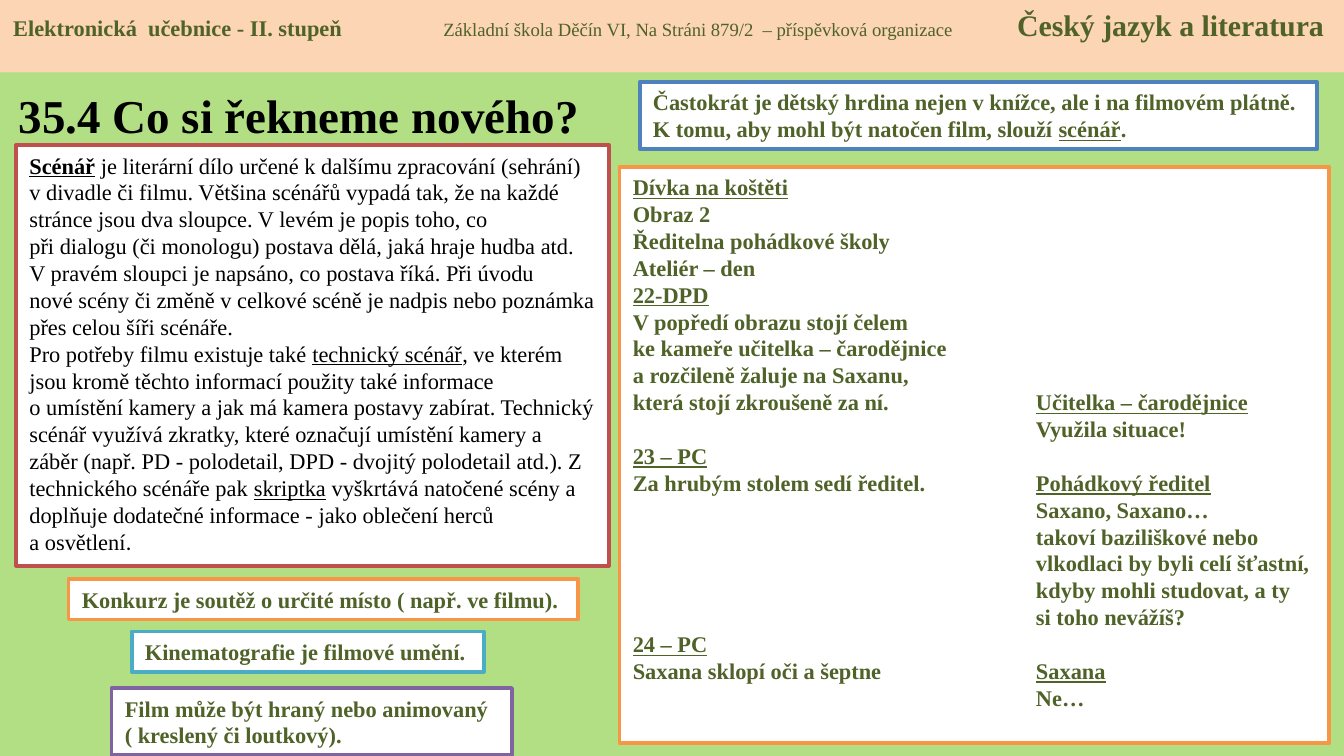
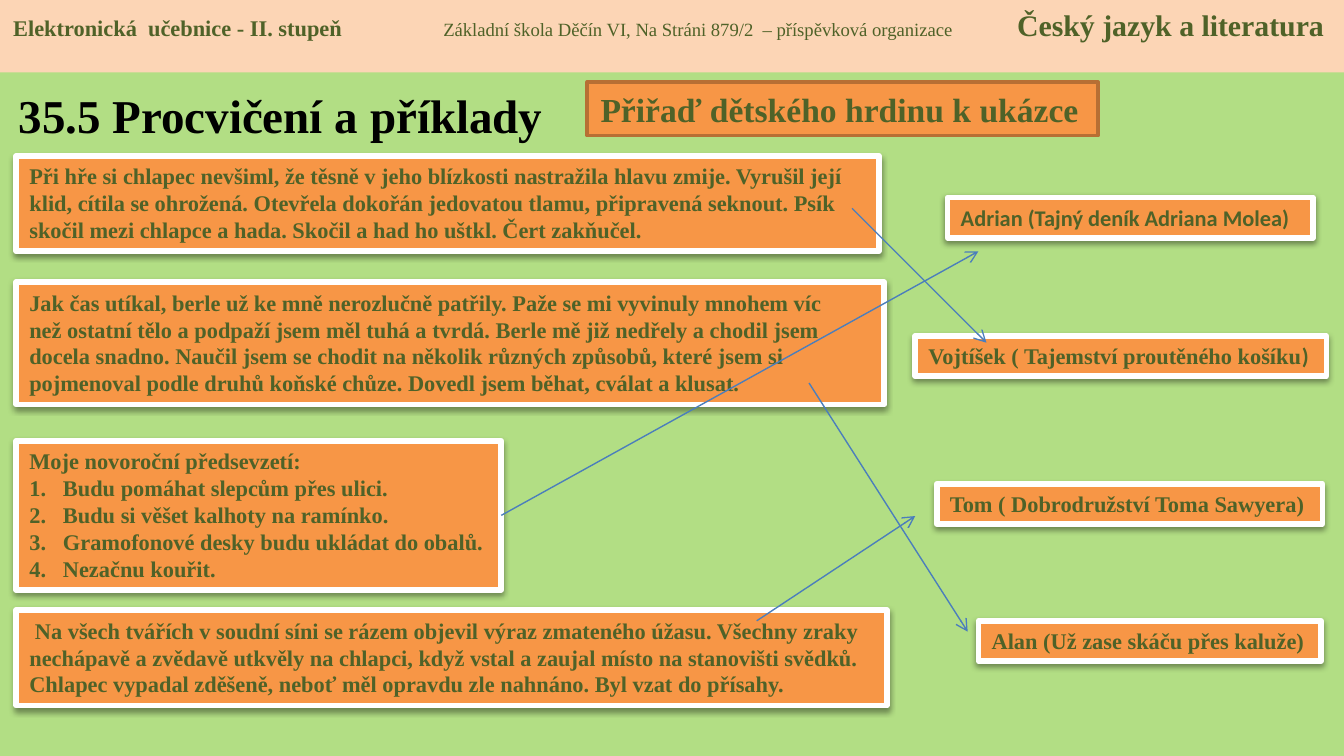
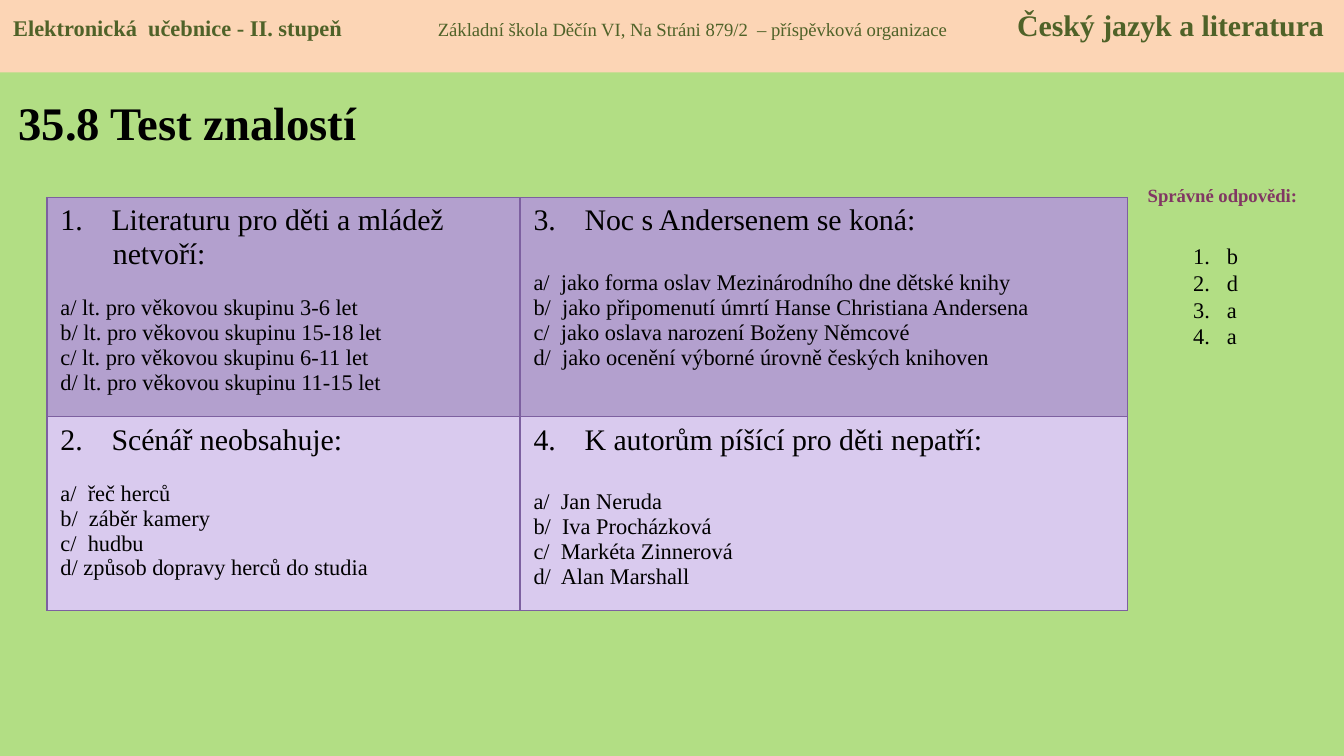
from dataclasses import dataclass, replace

from lxml.etree import SubElement
from pptx import Presentation
from pptx.dml.color import RGBColor
from pptx.enum.shapes import MSO_CONNECTOR as CONNECTOR, MSO_SHAPE as SHAPE
from pptx.enum.text import MSO_ANCHOR as ANCHOR, PP_ALIGN as ALIGN
from pptx.oxml.ns import qn
from pptx.util import Inches, Pt

BACKGROUND = RGBColor(0xB2, 0xDE, 0x84)
PEACH = RGBColor(0xFC, 0xD5, 0xB5)
OLIVE = RGBColor(0x4F, 0x62, 0x28)
BLACK = RGBColor(0, 0, 0)
WHITE = RGBColor(0xFF, 0xFF, 0xFF)
RED = RGBColor(0xC0, 0x50, 0x4D)
BLUE = RGBColor(0x4F, 0x81, 0xBD)
ARROW_BLUE = RGBColor(0x4B, 0x7E, 0xBC)
TEAL = RGBColor(0x4B, 0xAC, 0xC6)
PURPLE = RGBColor(0x80, 0x64, 0xA2)
ORANGE = RGBColor(0xF7, 0x96, 0x46)
BROWN = RGBColor(0xB7, 0x6F, 0x34)
PLUM = RGBColor(0x81, 0x37, 0x63)
ROW_FILLS = (RGBColor(0xB3, 0xA0, 0xCE), RGBColor(0xD9, 0xCA, 0xEE))
BORDER = "7D60A0"
HARD_SPACE = chr(160)


@dataclass(frozen=True)
class Style:
    """Look of a run of text."""
    size: float = 12
    color: RGBColor = OLIVE
    bold: bool = True
    font: str = "Times New Roman"


BODY = Style()
BODY_CALIBRI = replace(BODY, font="Calibri")
PLAIN = Style(color=BLACK, bold=False)
QUESTION = replace(PLAIN, size=16)


def add_run(p, text, style, underline=False):
    """Append one formatted run to a paragraph."""
    r = p.add_run()
    r.text = text
    font = r.font
    font.name, font.size, font.bold = style.font, Pt(style.size), style.bold
    font.color.rgb = style.color
    if underline:
        font.underline = True


def write(tf, lines, style, spacing=True):
    """Write paragraphs, with _underlined_ parts and ~ for a hard space."""
    for i, line in enumerate(lines):
        p = tf.paragraphs[0] if i == 0 else tf.add_paragraph()
        if spacing:
            p.line_spacing = Pt(1.2 * style.size)
        for n, part in enumerate(line.replace("~", HARD_SPACE).split("_")):
            if part:
                add_run(p, part, style, underline=n % 2 == 1)


def set_indent(p, left, first=0):
    """Set the left margin and first-line indent of a paragraph."""
    pPr = p._p.get_or_add_pPr()
    pPr.set("marL", str(Inches(left)))
    pPr.set("indent", str(Inches(first)))
    return pPr


def number(p, indent, start=1):
    """Give a paragraph an automatic number with a hanging indent."""
    bullet = SubElement(set_indent(p, indent, -indent), qn("a:buAutoNum"),
                        type="arabicPeriod")
    if start > 1:
        bullet.set("startAt", str(start))


def set_tabs(p, *positions):
    """Set left tab stops, in inches from the text edge."""
    tabs = SubElement(p._p.get_or_add_pPr(), qn("a:tabLst"))
    for position in positions:
        SubElement(tabs, qn("a:tab"), pos=str(Inches(position)), algn="l")


def add_text(slide, at, lines, style, anchor=ANCHOR.TOP):
    """Add a plain text box."""
    tb = slide.shapes.add_textbox(*map(Inches, at))
    tf = tb.text_frame
    tf.word_wrap = True
    tf.vertical_anchor = anchor
    write(tf, lines, style)
    return tb


def add_box(slide, at, lines, fill=WHITE, line=None, width=2, style=BODY, wrap=False):
    """Add a filled rectangle with left-aligned text."""
    sp = slide.shapes.add_shape(SHAPE.RECTANGLE, *map(Inches, at))
    sp.shadow.inherit = False
    sp.fill.solid()
    sp.fill.fore_color.rgb = fill
    if line is None:
        sp.line.fill.background()
    else:
        sp.line.color.rgb = line
        sp.line.width = Pt(width)
    tf = sp.text_frame
    tf.word_wrap = wrap
    tf.vertical_anchor = ANCHOR.TOP
    write(tf, lines, style)
    for p in tf.paragraphs:
        p.alignment = ALIGN.LEFT
    return sp


def add_card(slide, at, lines, style=BODY, wrap=False):
    """Add an orange box with a white frame and a soft shadow."""
    sp = add_box(slide, at, lines, ORANGE, WHITE, 3, style, wrap)
    effects = sp._element.spPr.find(qn("a:effectLst"))
    shadow = SubElement(effects, qn("a:outerShdw"), blurRad=str(Pt(3.1)),
                        dist=str(Pt(1.6)), dir="5400000", rotWithShape="0")
    color = SubElement(shadow, qn("a:srgbClr"), val="000000")
    SubElement(color, qn("a:alpha"), val="38000")
    return sp


def add_arrow(slide, start, end):
    """Add a thin line with an open arrowhead at its end."""
    cxn = slide.shapes.add_connector(CONNECTOR.STRAIGHT, *map(Inches, start + end))
    cxn.line.color.rgb = ARROW_BLUE
    cxn.line.width = Pt(0.75)
    SubElement(cxn.line._get_or_add_ln(), qn("a:tailEnd"), type="arrow")
    SubElement(cxn._element.spPr, qn("a:effectLst"))
    return cxn


def add_page(prs, title, top=0.53, width=4.69, size=25.2, school_tab=3.2):
    """Add a slide with the green ground, the header band and a title."""
    slide = prs.slides.add_slide(prs.slide_layouts[6])
    slide.background.fill.solid()
    slide.background.fill.fore_color.rgb = BACKGROUND
    add_text(slide, (0.04, top, width, 0.65), [title],
             Style(size=size, color=BLACK), ANCHOR.MIDDLE)
    band = add_box(slide, (0, 0, 10, 0.54), ["Elektronická  učebnice - II. stupeň\t"],
                   PEACH, wrap=True)
    p = band.text_frame.paragraphs[0]
    p.line_spacing = Pt(19.2)
    set_tabs(p, school_tab, 7.47)
    add_run(p, "Základní škola Děčín VI, Na Stráni 879/2  – příspěvková organizace\t",
            replace(BODY, size=10, bold=False))
    add_run(p, "Český jazyk a literatura", replace(BODY, size=16))
    return slide


def fill_cell(cell, fill, start, question, gap, answers):
    """Write a numbered question with its answers into a bordered cell."""
    cell.fill.solid()
    cell.fill.fore_color.rgb = fill
    tf = cell.text_frame
    write(tf, question, QUESTION, spacing=False)
    number(tf.paragraphs[0], 0.38, start)
    for p in tf.paragraphs[1:]:
        set_indent(p, 0.39)
    for i, answer in enumerate(answers):
        p = tf.add_paragraph()
        if i == 0:
            p.space_before = Pt(gap)
        add_run(p, answer, PLAIN)
    tcPr = cell._tc.get_or_add_tcPr()
    for i, side in enumerate(("a:lnL", "a:lnR", "a:lnT", "a:lnB")):
        ln = tcPr.makeelement(qn(side), {"w": str(Pt(0.75))})
        SubElement(SubElement(ln, qn("a:solidFill")), qn("a:srgbClr"), val=BORDER)
        tcPr.insert(i, ln)


def add_quiz(slide, at, widths, heights, questions):
    """Add the table of questions, numbered down the columns."""
    rows, cols = len(heights), len(widths)
    table = slide.shapes.add_table(rows, cols, *map(Inches, at)).table
    for column, width in zip(table.columns, widths):
        column.width = Inches(width)
    for row, height in zip(table.rows, heights):
        row.height = Inches(height)
    for i, (question, gap, answers) in enumerate(questions):
        col, row = divmod(i, rows)
        fill_cell(table.cell(row, col), ROW_FILLS[row], i + 1, question, gap, answers)


def build_screenplay(prs):
    """Build the slide about screenplays."""
    slide = add_page(prs, "35.4 Co si řekneme nového?")
    definition = add_box(slide, (0.12, 1.08, 4.41, 3.13), [
        "_Scénář_~je literární dílo určené k dalšímu zpracování (sehrání) v~divadle~či~filmu. "
        "Většina scénářů vypadá tak, že na každé stránce jsou dva sloupce. V levém je popis "
        "toho, co při~dialogu~(či monologu) postava dělá, jaká hraje~hudba~atd. V pravém "
        "sloupci je napsáno, co postava říká. Při úvodu nové~scény~či změně v celkové scéně "
        "je nadpis nebo poznámka přes celou šíři scénáře.",
        "Pro potřeby filmu existuje také _technický~scénář_, ve kterém jsou kromě těchto "
        "informací použity také informace",
        "o umístění kamery a jak má~kamera~postavy~zabírat. Technický scénář využívá zkratky, "
        "které označují umístění kamery a záběr (např. PD - polodetail, DPD - dvojitý "
        "polodetail atd.). Z technického scénáře pak~_skriptka_~vyškrtává natočené scény a "
        "doplňuje dodatečné informace - jako oblečení~herců a~osvětlení",
    ], line=RED, style=PLAIN, wrap=True)
    paragraphs = definition.text_frame.paragraphs
    paragraphs[0].runs[0].font.bold = True
    add_run(paragraphs[-1], ".", replace(PLAIN, font="Calibri"))
    notes = [
        ((4.76, 0.61, 5.04, 0.5), BLUE,
         ["Častokrát je dětský hrdina nejen v knížce, ale i na filmovém plátně.",
          "K tomu, aby mohl být natočen film, slouží _scénář_."]),
        ((0.98, 4.7, 2.62, 0.3), TEAL, ["Kinematografie je filmové umění."]),
        ((0.83, 5.12, 2.98, 0.5), PURPLE,
         ["Film může být hraný nebo animovaný", "( kreslený či loutkový)."]),
        ((0.51, 4.31, 3.79, 0.3), ORANGE,
         ["Konkurz je soutěž o určité místo ( např. ve filmu)."]),
    ]
    for at, color, lines in notes:
        add_box(slide, at, lines, line=color)
    script = add_box(slide, (4.61, 1.24, 5.28, 4.29), [
        "_Dívka na koštěti_",
        "Obraz 2",
        "Ředitelna pohádkové školy",
        "Ateliér – den",
        "_22-DPD_",
        "V popředí obrazu stojí čelem",
        "ke kameře učitelka – čarodějnice",
        "a rozčileně žaluje na Saxanu,",
        "která stojí zkroušeně za ní.\t_Učitelka – čarodějnice_",
        "\tVyužila situace!",
        "_23 – PC_",
        "Za hrubým stolem sedí ředitel.\t_Pohádkový ředitel_",
        "\tSaxano, Saxano…",
        "\ttakoví baziliškové nebo",
        "\tvlkodlaci by byli celí šťastní,",
        "\tkdyby mohli studovat, a ty",
        "\tsi toho nevážíš?",
        "_24 – PC_",
        "Saxana sklopí oči a šeptne\t_Saxana_",
        "\tNe…",
    ], line=ORANGE, wrap=True)
    for p in script.text_frame.paragraphs:
        set_tabs(p, 3)


def build_matching(prs):
    """Build the slide matching heroes to extracts."""
    slide = add_page(prs, "35.5 Procvičení a příklady", width=4.37)
    add_box(slide, (4.37, 0.61, 3.8, 0.4), ["Přiřaď dětského hrdinu k ukázce"],
            ORANGE, BROWN, style=replace(BODY, size=18))
    add_card(slide, (0.12, 1.16, 6.42, 0.71), [
        "Při hře si chlapec nevšiml, že těsně v jeho blízkosti nastražila hlavu zmije. Vyrušil "
        "její klid, cítila se ohrožená. Otevřela dokořán jedovatou tlamu, připravená seknout. "
        "Psík skočil mezi chlapce a hada. Skočil a had ho uštkl. Čert zakňučel."], wrap=True)
    basket = add_card(slide, (6.81, 2.5, 3.06, 0.3),
                      ["Vojtíšek ( Tajemství proutěného košíku"])
    add_run(basket.text_frame.paragraphs[0], ")", BODY_CALIBRI)
    add_card(slide, (0.12, 2.1, 6.46, 0.91), [
        "Jak čas utíkal, berle už ke mně nerozlučně patřily. Paže se mi vyvinuly mnohem víc",
        "než ostatní tělo a podpaží jsem měl tuhá a tvrdá. Berle mě již nedřely a chodil jsem "
        "docela snadno. Naučil jsem se chodit na několik různých způsobů, které jsem si "
        "pojmenoval podle druhů koňské chůze. Dovedl jsem běhat, cválat a klusat."], wrap=True)
    add_card(slide, (7.28, 4.62, 2.55, 0.3), ["Alan (Už zase skáču přes kaluže)"])
    resolutions = add_card(slide, (0.12, 3.28, 3.61, 1.11), [
        "Moje novoroční předsevzetí:",
        "Budu pomáhat slepcům přes ulici.",
        "Budu si věšet kalhoty na ramínko.",
        "Gramofonové desky budu ukládat do obalů.",
        "Nezačnu kouřit."])
    for p in resolutions.text_frame.paragraphs[1:]:
        number(p, 0.25)
    add_card(slide, (6.97, 3.6, 2.87, 0.3), ["Tom ( Dobrodružství Toma Sawyera)"])
    add_card(slide, (0.12, 4.54, 6.48, 0.71), [
        " Na všech tvářích v soudní síni se rázem objevil výraz zmateného úžasu. Všechny zraky",
        "nechápavě a zvědavě utkvěly na chlapci, když vstal a zaujal místo na stanovišti svědků.",
        "Chlapec vypadal zděšeně, neboť měl opravdu zle nahnáno. Byl vzat do přísahy."])
    add_card(slide, (7.05, 1.47, 2.72, 0.3), ["Adrian (Tajný deník Adriana Molea)"],
             BODY_CALIBRI)
    add_arrow(slide, (6.34, 1.55), (7.34, 2.55))
    add_arrow(slide, (6.02, 2.85), (7.2, 4.7))
    add_arrow(slide, (3.73, 3.84), (7.28, 1.87)).begin_connect(resolutions, 3)
    add_arrow(slide, (5.63, 4.62), (6.81, 3.84))


def build_test(prs):
    """Build the slide with the knowledge test."""
    slide = add_page(prs, "35.8 Test znalostí", 0.58, 3.19, 25, school_tab=3.16)
    heading = add_text(slide, (8.31, 1.32, 1.57, 0.27), ["Správné odpovědi:"],
                       Style(size=10, color=PLUM))
    heading.text_frame.paragraphs[0].alignment = ALIGN.CENTER
    add_quiz(slide, (0.35, 1.47, 8.04, 3.07), (3.52, 4.52), (1.63, 1.44), [
        (["Literaturu pro děti a mládež", "netvoří:"], 13.3,
         ["a/ lt. pro věkovou skupinu 3-6 let", "b/ lt. pro věkovou skupinu 15-18 let",
          "c/ lt. pro věkovou skupinu 6-11 let", "d/ lt. pro věkovou skupinu 11-15 let"]),
        (["Scénář neobsahuje:"], 13.3,
         ["a/  řeč herců", "b/  záběr kamery", "c/  hudbu",
          "d/ způsob dopravy herců do studia"]),
        (["Noc s Andersenem se koná:"], 17.7,
         ["a/  jako forma oslav Mezinárodního dne dětské knihy",
          "b/  jako připomenutí úmrtí Hanse Christiana Andersena",
          "c/  jako oslava narození Boženy Němcové",
          "d/  jako ocenění výborné úrovně českých knihoven"]),
        (["K autorům píšící pro děti nepatří:"], 17.7,
         ["a/  Jan Neruda", "b/  Iva Procházková", "c/  Markéta Zinnerová",
          "d/  Alan Marshall"]),
    ])
    answers = add_text(slide, (8.78, 1.55, 0.55, 1.31), "bdaa", PLAIN)
    answers.text_frame.margin_top = Inches(0.25)
    for p in answers.text_frame.paragraphs:
        number(p, 0.25)


def main():
    """Build and save the 16:9 presentation."""
    prs = Presentation()
    prs.slide_width = Inches(10)
    prs.slide_height = Inches(10) * 9 // 16
    build_screenplay(prs)
    build_matching(prs)
    build_test(prs)
    prs.save("out.pptx")


if __name__ == "__main__":
    main()
